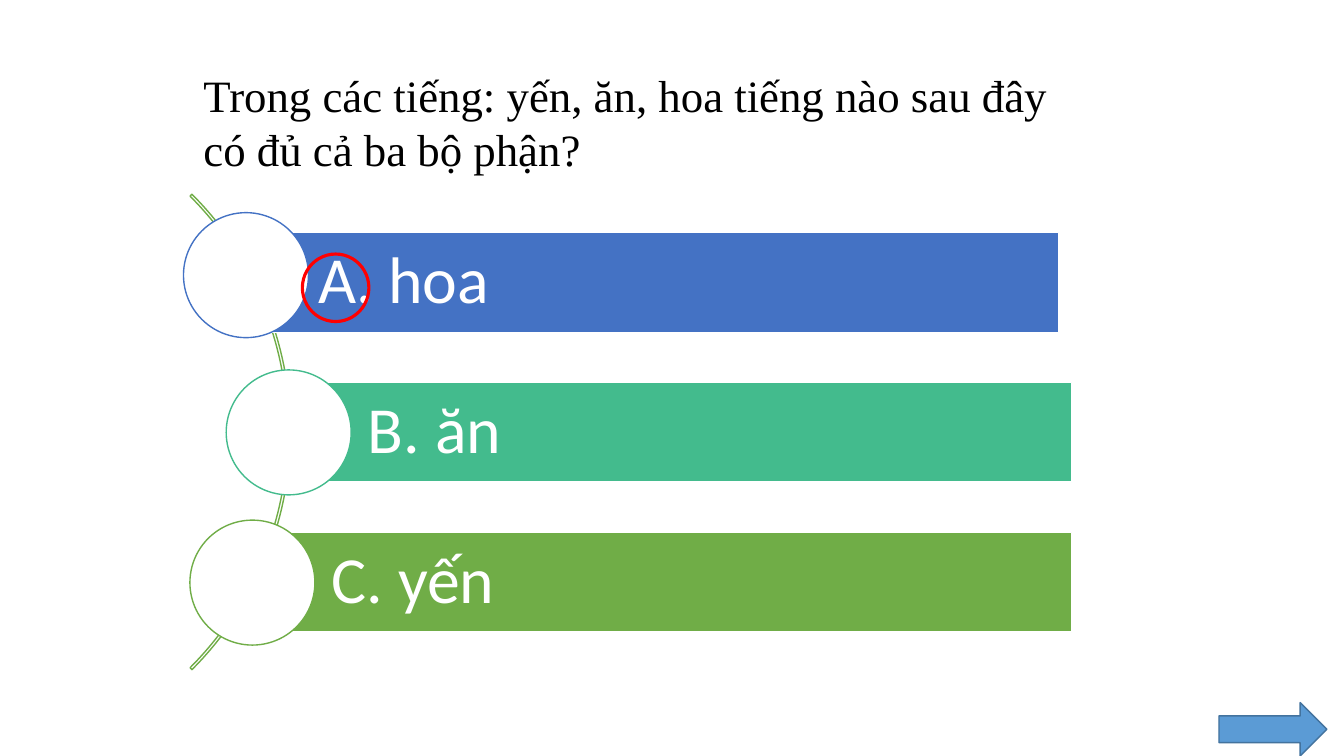
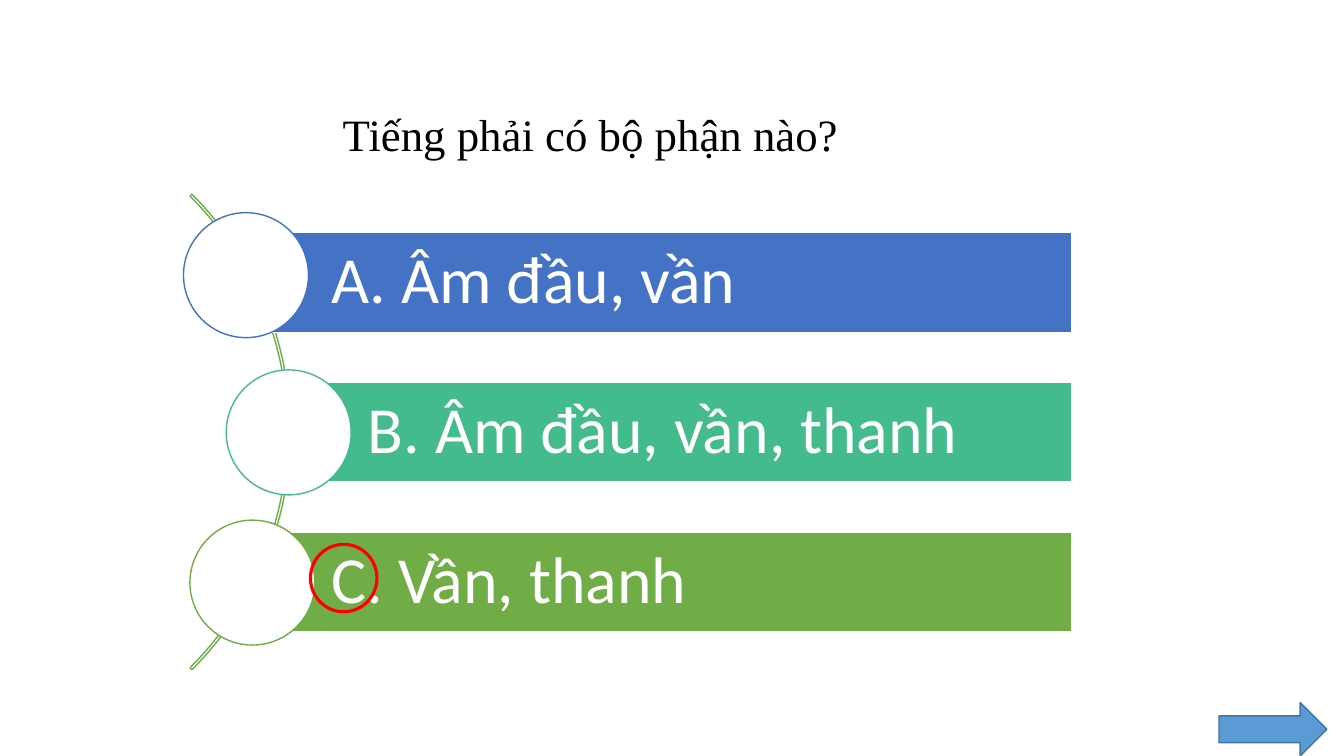
import dataclasses
from typing import Optional

import pptx
import pptx.dml.color
import pptx.enum.shapes
import pptx.enum.text
import pptx.util

SHAPE = pptx.enum.shapes.MSO_SHAPE
ANCHOR = pptx.enum.text.MSO_ANCHOR
ALIGN = pptx.enum.text.PP_ALIGN

SLIDE_WIDTH = pptx.util.Inches(13.33)
SLIDE_HEIGHT = pptx.util.Inches(7.5)

WHITE, BLACK, RED = "FFFFFF", "000000", "FF0000"
BLUE, TEAL, GREEN = "4472C4", "43BB8D", "70AD47"
ARROW_FILL, ARROW_LINE = "5B9BD5", "43739E"

BAR_RIGHT = 79.74
BAR_TOP, BAR_PITCH, BAR_HEIGHT = 30.75, 19.83, 13.2
DISC_WIDTH, DISC_HEIGHT = 9.3, 16.53
MARK_WIDTH, MARK_HEIGHT = 4.95, 8.93

BAR_FRAME = {
    "word_wrap": True,
    "vertical_anchor": ANCHOR.MIDDLE,
    "margin_left": pptx.util.Inches(0.79),
    "margin_top": pptx.util.Inches(0.13),
    "margin_right": pptx.util.Inches(0.13),
    "margin_bottom": pptx.util.Inches(0.13),
}
BAR_PARAGRAPH = {"alignment": ALIGN.LEFT, "line_spacing": 0.9}
BAR_FONT = {"name": "Calibri", "size": pptx.util.Pt(47)}
QUESTION_FRAME = {"word_wrap": True, "vertical_anchor": ANCHOR.TOP}
QUESTION_PARAGRAPH = {"alignment": ALIGN.LEFT}
QUESTION_FONT = {"name": "Times New Roman", "size": pptx.util.Pt(32)}


@dataclasses.dataclass(frozen=True)
class Area:
    """Percentages of the slide's width and height."""

    left: float
    top: float
    width: float
    height: float

    def lengths(self) -> tuple:
        return (
            int(SLIDE_WIDTH * self.left / 100),
            int(SLIDE_HEIGHT * self.top / 100),
            int(SLIDE_WIDTH * self.width / 100),
            int(SLIDE_HEIGHT * self.height / 100),
        )


@dataclasses.dataclass(frozen=True)
class Row:
    color: str
    bar_left: float
    disc_left: float
    disc_top: float


@dataclasses.dataclass(frozen=True)
class Quiz:
    question: str
    question_area: Area
    answers: tuple
    mark_left: float
    mark_top: float
    first_bar_shift: float = 0


ROWS = (
    Row(BLUE, 18.75, 13.65, 28.13),
    Row(TEAL, 21.45, 16.83, 48.93),
    Row(GREEN, 18.75, 14.13, 68.8),
)
ARC = Area(-28.43, 12.67, 50.04, 88.93)
NEXT_ARROW = Area(90.7, 92.93, 8.03, 7.07)

QUIZZES = (
    Quiz(
        "Trong các tiếng: yến, ăn, hoa tiếng nào sau đây có đủ cả ba bộ phận?",
        Area(14.4, 8.27, 65.12, 15.73),
        ("A. hoa", "B. ăn", "C. yến"),
        22.5,
        33.6,
        first_bar_shift=-0.98,
    ),
    Quiz(
        "Tiếng phải có bộ phận nào?",
        Area(24.76, 13.47, 44.34, 8.53),
        ("A. Âm đầu, vần", "B. Âm đầu, vần, thanh", "C. Vần, thanh"),
        23.1,
        72,
    ),
)


def rgb(code: str) -> pptx.dml.color.RGBColor:
    return pptx.dml.color.RGBColor.from_string(code)


def apply(target, values: dict) -> None:
    for name, value in values.items():
        setattr(target, name, value)


def write(holder, text: str, color: str, frame: dict, paragraph: dict, font: dict) -> None:
    apply(holder.text_frame, frame)
    line = holder.text_frame.paragraphs[0]
    apply(line, paragraph)
    run = line.add_run()
    run.text = text
    apply(run.font, font)
    run.font.color.rgb = rgb(color)


def draw(slide, kind, area: Area, fill: Optional[str], line: str, weight: float = 1):
    figure = slide.shapes.add_shape(kind, *area.lengths())
    figure.shadow.inherit = False
    if fill is None:
        figure.fill.background()
    else:
        figure.fill.solid()
        figure.fill.fore_color.rgb = rgb(fill)
    figure.line.color.rgb = rgb(line)
    figure.line.width = pptx.util.Pt(weight)
    return figure


def draw_answer(slide, row: Row, position: int, answer: str, shift: float) -> None:
    bar_area = Area(
        row.bar_left + shift,
        BAR_TOP + position * BAR_PITCH,
        BAR_RIGHT - row.bar_left,
        BAR_HEIGHT,
    )
    bar = draw(slide, SHAPE.RECTANGLE, bar_area, row.color, WHITE)
    write(bar, answer, WHITE, BAR_FRAME, BAR_PARAGRAPH, BAR_FONT)
    disc = Area(row.disc_left, row.disc_top, DISC_WIDTH, DISC_HEIGHT)
    draw(slide, SHAPE.OVAL, disc, WHITE, row.color)


def draw_quiz(slide, quiz: Quiz) -> None:
    arc = draw(slide, SHAPE.BLOCK_ARC, ARC, None, GREEN)
    for index, value in enumerate((189, 27, 0.004)):
        arc.adjustments[index] = value
    for position, (row, answer) in enumerate(zip(ROWS, quiz.answers)):
        shift = quiz.first_bar_shift if position == 0 else 0
        draw_answer(slide, row, position, answer, shift)
    question = slide.shapes.add_textbox(*quiz.question_area.lengths())
    write(question, quiz.question, BLACK, QUESTION_FRAME, QUESTION_PARAGRAPH, QUESTION_FONT)
    mark = Area(quiz.mark_left, quiz.mark_top, MARK_WIDTH, MARK_HEIGHT)
    draw(slide, SHAPE.OVAL, mark, None, RED, 2.25)
    draw(slide, SHAPE.RIGHT_ARROW, NEXT_ARROW, ARROW_FILL, ARROW_LINE)


def main() -> None:
    deck = pptx.Presentation()
    apply(deck, {"slide_width": SLIDE_WIDTH, "slide_height": SLIDE_HEIGHT})
    for quiz in QUIZZES:
        draw_quiz(deck.slides.add_slide(deck.slide_layouts[6]), quiz)
    deck.save("out.pptx")


if __name__ == "__main__":
    main()
